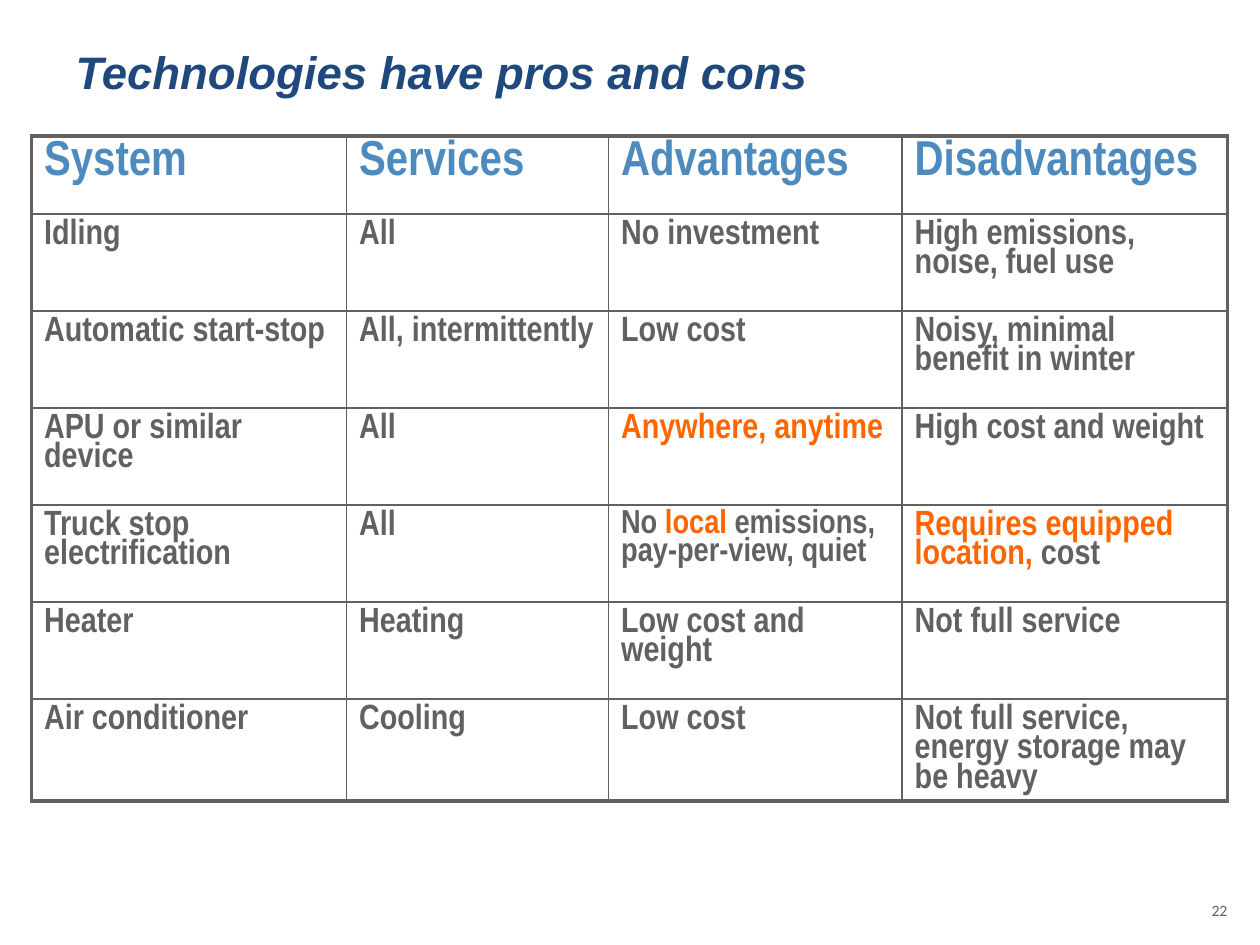
"""Build a slide with a table comparing anti-idling technologies."""
from typing import NamedTuple

from lxml.etree import SubElement
from pptx import Presentation
from pptx.dml.color import RGBColor as RGB
from pptx.enum.text import MSO_ANCHOR as ANCHOR, PP_ALIGN as ALIGN
from pptx.oxml.ns import qn
from pptx.util import Inches, Pt

COLORS = {"navy": "1F497D", "blue": "4D8ABE", "gray": "616161", "orange": "FF6600"}


class Run(NamedTuple):
    text: str
    size: float = 20
    color: str = "gray"
    font: str = "Arial Narrow"
    bold: bool = True
    italic: bool = False


HEADERS = ["System", "Services", "Advantages", "Disadvantages"]
BODY = [
    ["Idling", "All", "No investment", "High emissions, noise, fuel use"],
    ["Automatic start-stop", "All, intermittently", "Low cost",
     "Noisy, minimal benefit in winter"],
    ["APU or similar device", "All", [Run("Anywhere, anytime", color="orange")],
     "High cost and weight"],
    ["Truck stop electrification", "All",
     [Run("No", 19), Run(" local ", 19, "orange"),
      Run("emissions, pay-per-view, quiet", 19)],
     [Run("Requires equipped location, ", color="orange"), Run("cost")]],
    ["Heater", "Heating", "Low cost and weight", "Not full service"],
    ["Air conditioner", "Cooling", "Low cost",
     "Not full service, energy storage may be heavy"],
]
ROWS = [[[Run(h, 28, "blue")] for h in HEADERS]] + [
    [[Run(c)] if isinstance(c, str) else c for c in row] for row in BODY]
COL_WIDTHS = [2.5, 2.08, 2.33, 2.58]
ROW_HEIGHTS = [0.62] + [0.77] * len(BODY)


def add_runs(p, runs: list[Run]) -> None:
    for run in runs:
        r = p.add_run()
        r.text = run.text
        f = r.font
        f.size, f.name, f.bold, f.italic = Pt(run.size), run.font, run.bold, run.italic
        f.color.rgb = RGB.from_string(COLORS[run.color])


def add_border(cell, side: str, width: float) -> None:
    ln = SubElement(cell._tc.get_or_add_tcPr(), qn(f"a:ln{side}"), w=str(Pt(width)))
    fill = SubElement(ln, qn("a:solidFill"))
    SubElement(fill, qn("a:srgbClr"), val=COLORS["gray"])


def add_grid(s, left: float, top: float) -> None:
    last_row, last_col = len(ROWS) - 1, len(COL_WIDTHS) - 1
    table = s.shapes.add_table(
        len(ROWS), len(COL_WIDTHS), Inches(left), Inches(top),
        Inches(sum(COL_WIDTHS)), Inches(sum(ROW_HEIGHTS))).table
    table.first_row = table.horz_banding = False
    for col, width in zip(table.columns, COL_WIDTHS):
        col.width = Inches(width)
    for row, height in zip(table.rows, ROW_HEIGHTS):
        row.height = Inches(height)
    for i, row in enumerate(ROWS):
        for j, runs in enumerate(row):
            cell = table.cell(i, j)
            outer = {"L": j == 0, "R": j == last_col, "T": i == 0, "B": i == last_row}
            for side, is_outer in outer.items():
                add_border(cell, side, 2.25 if is_outer else 1)
            cell.fill.background()
            p = cell.text_frame.paragraphs[0]
            p.line_spacing = 0.9
            add_runs(p, runs)


def add_title(s, text: str) -> None:
    sp = s.shapes.title
    sp.left, sp.top, sp.width, sp.height = map(Inches, (0.5, 0.3, 9, 1.25))
    tf = sp.text_frame
    tf.vertical_anchor = ANCHOR.TOP
    p = tf.paragraphs[0]
    p.alignment = ALIGN.LEFT
    add_runs(p, [Run(text, 26, "navy", "Arial", italic=True)])


def add_page_number(s, number: int) -> None:
    sp = s.shapes.add_textbox(*map(Inches, (9.42, 7.1, 0.42, 0.4)))
    tf = sp.text_frame
    tf.word_wrap = True
    p = tf.paragraphs[0]
    p.alignment = ALIGN.RIGHT
    add_runs(p, [Run(str(number), 9, font="Calibri", bold=False)])


def main() -> None:
    prs = Presentation()
    prs.slide_width, prs.slide_height = Inches(10), Inches(7.5)
    s = prs.slides.add_slide(prs.slide_layouts.get_by_name("Title Only"))
    add_title(s, "Technologies have pros and cons")
    add_grid(s, 0.25, 1.08)
    add_page_number(s, 22)
    prs.save("out.pptx")


if __name__ == "__main__":
    main()
